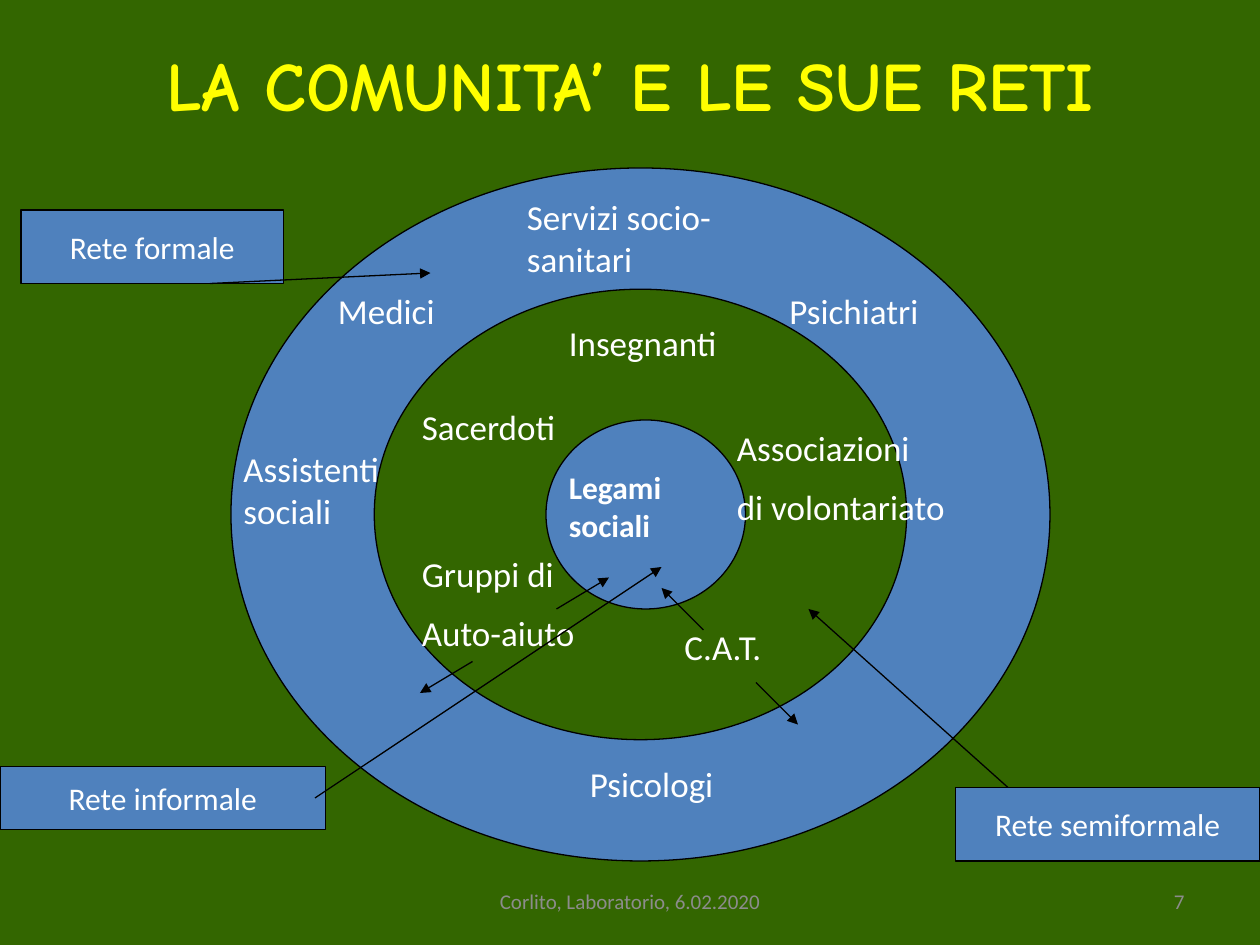
from lxml.etree import SubElement
from pptx import Presentation
from pptx.dml.color import RGBColor
from pptx.enum.shapes import MSO_CONNECTOR, MSO_SHAPE
from pptx.enum.text import MSO_ANCHOR, MSO_AUTO_SIZE, PP_ALIGN
from pptx.oxml.ns import qn
from pptx.util import Pt

PX = 9525
ARC = 0.5523
COLORS = {
    "background": "336600",
    "network": "4F81BD",
    "outline": "000000",
    "title": "FFFF00",
    "label": "FFFFFF",
    "footer": "8C8C8C",
}


def color(name):
    """Return the named colour."""
    return RGBColor.from_string(COLORS[name])


def emu(*lengths):
    """Turn px lengths into EMU."""
    return [round(length * PX) for length in lengths]


def write(frame, lines, size, tint, align=PP_ALIGN.LEFT, font="Calibri", bold=False, gap=0):
    """Fill a text frame with evenly formatted paragraphs."""
    frame.auto_size = MSO_AUTO_SIZE.NONE
    for index, line in enumerate(lines):
        paragraph = frame.add_paragraph() if index else frame.paragraphs[0]
        paragraph.text = line
        paragraph.alignment = align
        paragraph.space_before = Pt(gap)
        paragraph.font.size = Pt(size)
        paragraph.font.name = font
        paragraph.font.bold = bold
        paragraph.font.color.rgb = color(tint)


def label(slide, box, lines, size=20, tint="label", **style):
    """Add a wrapping text box and return its frame."""
    frame = slide.shapes.add_textbox(*emu(*box)).text_frame
    frame.word_wrap = True
    write(frame, lines, size, tint, **style)
    return frame


def paint(shape):
    """Give a shape the look of a network."""
    shape.shadow.inherit = False
    shape.fill.solid()
    shape.fill.fore_color.rgb = color("network")
    shape.line.color.rgb = color("outline")
    shape.line.width = Pt(0.75)


def arrow(slide, origin, start, end):
    """Draw an arrow between two points relative to the origin."""
    left, top = origin
    ends = emu(left + start[0], top + start[1], left + end[0], top + end[1])
    connector = slide.shapes.add_connector(MSO_CONNECTOR.STRAIGHT, *ends)
    connector.line.color.rgb = color("outline")
    connector.line.width = Pt(0.75)
    SubElement(connector.line._get_or_add_ln(), qn("a:tailEnd"), type="triangle")
    SubElement(connector._element.spPr, qn("a:effectLst"))


def round_off(shape):
    """Turn each straight quarter of a freeform's contours into an elliptical arc."""
    upright = True
    for point in list(shape._element.iter(qn("a:pt"))):
        step = point.getparent()
        x, y = int(point.get("x")), int(point.get("y"))
        if step.tag == qn("a:moveTo"):
            upright = True
        else:
            bend_x, bend_y = ARC * (x - last_x), ARC * (y - last_y)
            if upright:
                controls = [(last_x, last_y + bend_y), (x - bend_x, y)]
            else:
                controls = [(last_x + bend_x, last_y), (x, y - bend_y)]
            curve = SubElement(step.getparent(), qn("a:cubicBezTo"))
            for control_x, control_y in controls + [(x, y)]:
                SubElement(curve, qn("a:pt"), x=str(round(control_x)), y=str(round(control_y)))
            step.getparent().replace(step, curve)
            upright = not upright
        last_x, last_y = x, y


def ring(slide, box, inset=0.175):
    """Draw an elliptical ring whose hole is inset in proportion to the box."""
    left, top, width, height = box

    def quarters(margin):
        near, middle, far = margin, 0.5, 1 - margin
        stops = [(near, middle), (middle, near), (far, middle), (middle, far), (near, middle)]
        return [emu(left + width * x, top + height * y) for x, y in stops]

    rim, hole = quarters(0), quarters(inset)[::-1]
    builder = slide.shapes.build_freeform(*rim[0], scale=1.0)
    builder.add_line_segments(rim[1:], close=True)
    builder.move_to(*hole[0])
    builder.add_line_segments(hole[1:], close=True)
    shape = builder.convert_to_shape()
    round_off(shape)
    paint(shape)


def community(slide, box):
    """Draw the concentric networks with their members and links."""
    left, top = box[:2]
    ring(slide, box)
    core = emu(left + 240, top + 192, 152, 144)
    paint(slide.shapes.add_shape(MSO_SHAPE.OVAL, *core))
    label(slide, (left + 248, top + 224, 136, 86), ["Legami sociali"], size=18, bold=True)

    members = [
        (248, 112, 184, 41, ["Insegnanti"]),
        (136, 176, 138, 41, ["Sacerdoti"]),
        (376, 192, 192, 89, ["Associazioni", "di volontariato"]),
        (136, 288, 176, 89, ["Gruppi di", "Auto-aiuto"]),
        (336, 344, 96, 41, ["C.A.T."]),
        (216, 16, 192, 74, ["Servizi socio-sanitari"]),
        (72, 88, 128, 41, ["Medici"]),
        (416, 88, 184, 41, ["Psichiatri"]),
        (0, 208, 136, 74, ["Assistenti sociali"]),
        (264, 448, 128, 41, ["Psicologi"]),
    ]
    for x, y, width, height, lines in members:
        label(slide, (left + x, top + y, width, height), lines, gap=10)

    links = [
        ((248, 336), (288, 312)),
        ((184, 376), (144, 400)),
        ((400, 392), (432, 424)),
        ((360, 352), (328, 320)),
    ]
    for start, end in links:
        arrow(slide, (left, top), start, end)


def network_tag(slide, box, name, start, end):
    """Add a network's name box and the arrow to its ring."""
    tag = slide.shapes.add_shape(MSO_SHAPE.RECTANGLE, *emu(*box))
    paint(tag)
    write(tag.text_frame, [name], 18, "label", align=PP_ALIGN.CENTER)
    tag.text_frame.word_wrap = False
    tag.text_frame.vertical_anchor = MSO_ANCHOR.MIDDLE
    arrow(slide, box[:2], start, end)


def heading(slide, box, text):
    """Place and format the title placeholder."""
    title = slide.shapes.title
    title.left, title.top, title.width, title.height = emu(*box)
    write(title.text_frame, [text], 39.6, "title", PP_ALIGN.CENTER, "Comic Neue", True)
    title.text_frame.vertical_anchor = MSO_ANCHOR.MIDDLE


def footer(slide, box, event, number):
    """Write the event and the slide number along the bottom."""
    left, top, width, height = box
    parts = [(0, 304, event, PP_ALIGN.CENTER), (width - 224, 224, number, PP_ALIGN.RIGHT)]
    for x, part_width, text, align in parts:
        frame = label(slide, (left + x, top, part_width, height), [text], 12, "footer", align=align)
        frame.vertical_anchor = MSO_ANCHOR.MIDDLE


def main():
    """Build and save the slide."""
    deck = Presentation()
    deck.slide_width, deck.slide_height = emu(960, 720)
    slide = deck.slides.add_slide(deck.slide_layouts[5])
    slide.background.fill.solid()
    slide.background.fill.fore_color.rgb = color("background")

    footer(slide, (328, 667, 584, 39), "Corlito, Laboratorio, 6.02.2020", "7")
    heading(slide, (0, 32, 960, 64), "LA COMUNITA’ E LE SUE RETI")
    community(slide, (176, 128, 624, 528))
    network_tag(slide, (0, 584, 248, 48), "Rete informale", (240, 24), (504, -152))
    network_tag(slide, (728, 600, 232, 56), "Rete semiformale", (40, 0), (-112, -136))
    network_tag(slide, (16, 160, 200, 56), "Rete formale", (144, 56), (312, 48))
    deck.save("out.pptx")


if __name__ == "__main__":
    main()
